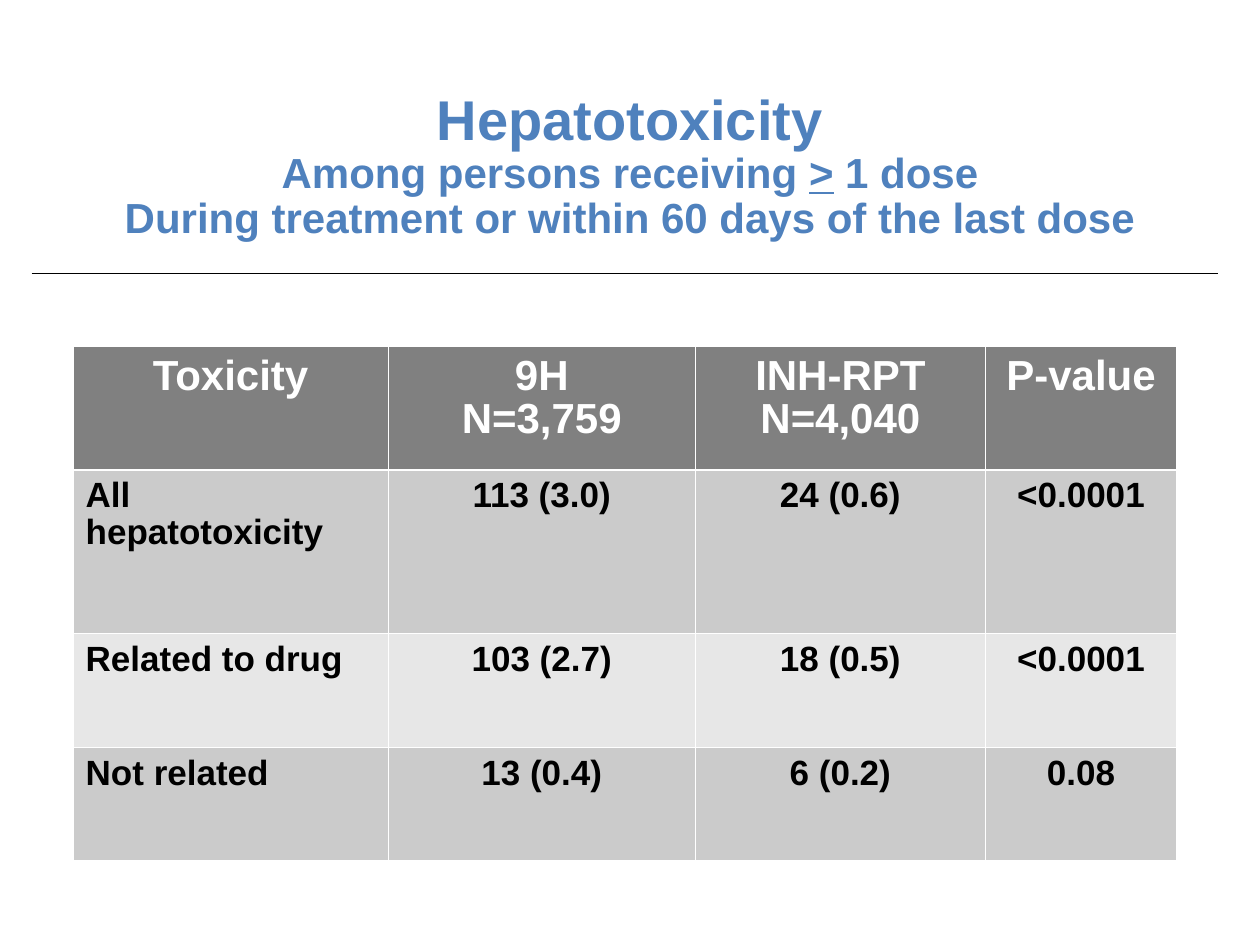
from pptx import Presentation
from pptx.dml.color import RGBColor
from pptx.enum.shapes import MSO_CONNECTOR
from pptx.enum.text import MSO_ANCHOR, PP_ALIGN
from pptx.oxml.ns import qn
from pptx.util import Inches, Pt
from lxml.etree import SubElement


def color(value):
    return RGBColor.from_string(value)


def add_text(paragraph, text, size=20, fill="000000", bold=True, underline=False, font="Arial"):
    for index, line in enumerate(text.split("\n")):
        if index:
            paragraph.add_line_break()
        if not line:
            continue
        run = paragraph.add_run()
        run.text = line
        run.font.name = font
        run.font.size = Pt(size)
        run.font.bold = bold
        run.font.underline = underline
        run.font.color.rgb = color(fill)


class SlideBuilder:
    accent = "4F81BD"
    white = "FFFFFF"
    black = "000000"
    header_fill = "808080"
    band_fills = ("CBCBCB", "E7E7E7")

    def __init__(self, slide):
        self.slide = slide

    def title(self, pieces, left, top, width, height):
        shape = self.slide.shapes.add_textbox(Inches(left), Inches(top), Inches(width), Inches(height))
        frame = shape.text_frame
        frame.word_wrap = True
        frame.vertical_anchor = MSO_ANCHOR.MIDDLE
        frame.margin_bottom = Inches(0.43)
        paragraph = frame.paragraphs[0]
        paragraph.alignment = PP_ALIGN.CENTER
        paragraph.line_spacing = 0.89
        for text, size, underline in pieces:
            add_text(paragraph, text, size=size, fill=self.accent, underline=underline)

    def rule(self, left, right, top):
        connector = self.slide.shapes.add_connector(
            MSO_CONNECTOR.STRAIGHT, Inches(left), Inches(top), Inches(right), Inches(top))
        connector.line.color.rgb = color(self.black)
        connector.line.width = Pt(1)
        SubElement(connector._element.spPr, qn("a:effectLst"))

    def borders(self, cell, top, bottom):
        properties = cell._tc.get_or_add_tcPr()
        for side, width in (("L", 0.45), ("R", 0.45), ("T", top), ("B", bottom)):
            line = SubElement(properties, qn(f"a:ln{side}"), w=str(Pt(width)))
            SubElement(SubElement(line, qn("a:solidFill")), qn("a:srgbClr"), val=self.white)

    def cell(self, cell, text, row, column):
        header = row == 0
        self.borders(cell, 1.47 if row == 1 else 0.45, 1.47 if header else 0.45)
        cell.fill.solid()
        cell.fill.fore_color.rgb = color(self.header_fill if header else self.band_fills[(row - 1) % 2])
        cell.margin_left = cell.margin_right = Inches(0.1)
        cell.margin_top = Inches(0.07)
        cell.margin_bottom = Inches(0.05)
        frame = cell.text_frame
        for index, line in enumerate(text.split("\n")):
            paragraph = frame.add_paragraph() if index else frame.paragraphs[0]
            paragraph.alignment = PP_ALIGN.CENTER if header or column else PP_ALIGN.LEFT
            paragraph.line_spacing = 0.93
            add_text(paragraph, line, size=24 if header else 20,
                     fill=self.white if header else self.black)

    def table(self, rows, left, top, widths, heights):
        table = self.slide.shapes.add_table(
            len(heights), len(widths), Inches(left), Inches(top),
            Inches(sum(widths)), Inches(sum(heights))).table
        for column, width in zip(table.columns, widths):
            column.width = Inches(width)
        for row, height in zip(table.rows, heights):
            row.height = Inches(height)
        for row, texts in enumerate(rows):
            for column, text in enumerate(texts):
                self.cell(table.cell(row, column), text, row, column)


def main():
    presentation = Presentation()
    presentation.slide_width = Inches(10)
    presentation.slide_height = Inches(7.5)
    builder = SlideBuilder(presentation.slides.add_slide(presentation.slide_layouts[6]))

    builder.title([
        ("Hepatotoxicity\n", 32, False),
        ("Among persons receiving ", 24, False),
        (">", 24, True),
        (" 1 dose\nDuring treatment or within 60 days of the last dose", 24, False),
    ], 0.5, 0.88, 9, 1.28)
    builder.table([
        ("Toxicity", "9H\nN=3,759", "INH-RPT\nN=4,040", "P-value"),
        ("All hepatotoxicity", "113 (3.0)", "24 (0.6)", "<0.0001"),
        ("Related to drug", "103 (2.7)", "18 (0.5)", "<0.0001"),
        ("Not related", "13 (0.4)", "6 (0.2)", "0.08"),
    ], 0.58, 2.75, (2.5, 2.44, 2.3, 1.52), (0.98, 1.3, 0.9, 0.9))
    builder.rule(0.25, 9.67, 2.17)
    presentation.save("out.pptx")


if __name__ == "__main__":
    main()
